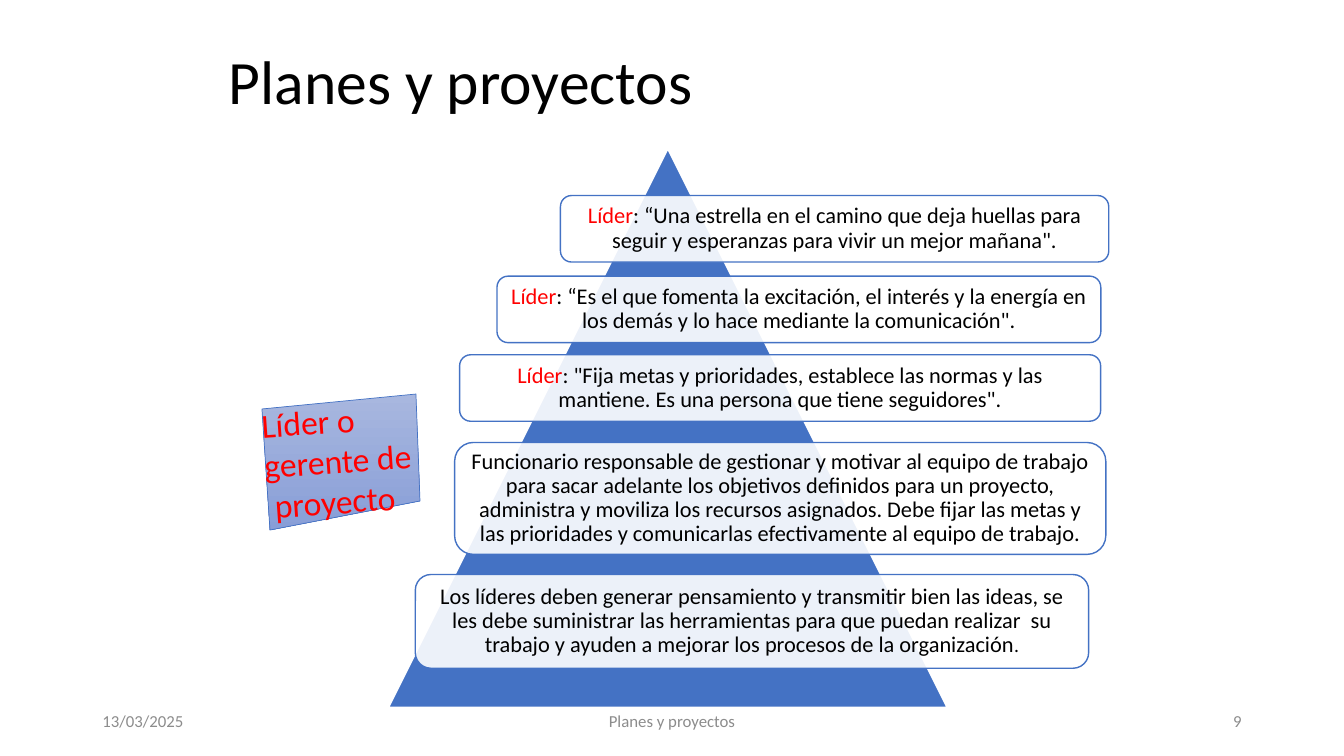
from lxml.etree import SubElement
from pptx import Presentation
from pptx.dml.color import RGBColor
from pptx.enum.shapes import MSO_SHAPE as Shape
from pptx.enum.text import MSO_ANCHOR as Anchor, MSO_AUTO_SIZE as AutoSize, PP_ALIGN as Align
from pptx.oxml.ns import qn
from pptx.util import Inches, Pt

W, H = Inches(13.333), Inches(7.5)
FONT = "Calibri"
COLORS = {
    "black": "000000", "white": "FFFFFF", "red": "FF0000", "grey": "8C8C8C",
    "blue": "4472C4", "label_top": "A8B7DF", "label_bottom": "889ED7",
}
LEADER = ("Líder", "red", 16)
QUOTES = [
    ((41.7, 25.87, 40.8, 8.8), [LEADER, (
        ": “Una estrella en el camino que deja huellas para seguir y "
        "esperanzas para vivir un mejor mañana\".", "black", 16)]),
    ((36.98, 36.53, 44.93, 8.8), [LEADER, (
        ": “Es el que fomenta la excitación, el interés y la energía en "
        "los demás y lo hace mediante la comunicación\".", "black", 16)]),
    ((34.2, 46.93, 47.7, 8.8), [LEADER, (
        ": \"Fija metas y prioridades, establece las normas y las "
        "mantiene. Es una persona que tiene seguidores\".", "black", 16)]),
    ((33.83, 58.53, 48.45, 14.8), [(
        "Funcionario responsable de gestionar y motivar al equipo de trabajo "
        "para sacar adelante los objetivos definidos para un proyecto, "
        "administra y moviliza los recursos asignados. Debe fijar las metas y "
        "las prioridades y comunicarlas efectivamente al equipo de trabajo.",
        "black", 16)]),
    ((30.9, 76, 50.1, 12.4), [(
        "Los líderes deben generar pensamiento y transmitir bien las ideas, se "
        "les debe suministrar las herramientas para que puedan realizar  su "
        "trabajo y ayuden a mejorar los procesos de la organización",
        "black", 16), (".", "black", 14)]),
]
FOOTERS = [
    (6.88, 22.5, "13/03/2025", Align.LEFT),
    (33.13, 33.75, "Planes y proyectos", Align.CENTER),
    (70.63, 22.5, "9", Align.RIGHT),
]
LABEL_CORNERS = [(19.49, 54.1), (30.95, 52.12), (31.25, 66.27), (20.09, 70.11)]


def rgb(name):
    """Return a named colour."""
    return RGBColor.from_string(COLORS[name])


def across(share):
    """Turn a percentage of the slide width into a length."""
    return round(W * share / 100)


def down(share):
    """Turn a percentage of the slide height into a length."""
    return round(H * share / 100)


def box(x, y, w, h):
    """Turn percentages of the slide into left, top, width and height."""
    return across(x), down(y), across(w), down(h)


def style(p, size, color, align=Align.LEFT, spacing=1.0):
    """Set the font, alignment and line spacing of a paragraph."""
    p.font.name, p.font.size, p.font.color.rgb = FONT, Pt(size), rgb(color)
    p.alignment, p.line_spacing = align, spacing


def prepare(tf, inset=None):
    """Wrap a text frame and centre it vertically."""
    tf.word_wrap, tf.auto_size = True, AutoSize.NONE
    tf.vertical_anchor = Anchor.MIDDLE
    if inset is not None:
        tf.margin_left = tf.margin_right = Inches(inset)
        tf.margin_top = tf.margin_bottom = Inches(inset)


def paint(sp, fill, line, width):
    """Give a shape a flat fill and an outline without shadow."""
    sp.shadow.inherit = False
    sp.fill.solid()
    sp.fill.fore_color.rgb = rgb(fill)
    sp.line.color.rgb, sp.line.width = rgb(line), Pt(width)


def add_title(s, text):
    """Fill and place the title placeholder."""
    sp = s.shapes.title
    sp.left, sp.top, sp.width, sp.height = box(16.28, 2.8, 67.5, 16.67)
    sp.text_frame.text = text
    prepare(sp.text_frame)
    style(sp.text_frame.paragraphs[0], 44, "black", spacing=0.9)


def add_text(s, area, lines, size, color, align=Align.LEFT, inset=None):
    """Add a text box with one paragraph per line."""
    sp = s.shapes.add_textbox(*area)
    tf = sp.text_frame
    prepare(tf, inset)
    tf.text = "\n".join(lines)
    for p in tf.paragraphs:
        style(p, size, color, align)
    return sp


def add_label(s):
    """Add the slanted gradient label with its tilted text."""
    points = [(across(x), down(y)) for x, y in LABEL_CORNERS]
    builder = s.shapes.build_freeform(*points[0])
    builder.add_line_segments(points[1:], close=True)
    sp = builder.convert_to_shape()
    paint(sp, "label_top", "blue", 0.5)
    sp.fill.gradient()
    sp.fill.gradient_angle = 270
    for stop, color, position in zip(
            sp.fill.gradient_stops, ("label_top", "label_bottom"), (0, 1)):
        stop.color.rgb, stop.position = rgb(color), position
    text = add_text(s, box(19.65, 52.7, 11.25, 16.27),
                    ["Líder o gerente de", " proyecto"], 24, "red", inset=0)
    text.rotation = -4


def add_quote(s, area, runs):
    """Add a translucent rounded box with coloured runs."""
    sp = s.shapes.add_shape(Shape.ROUNDED_RECTANGLE, *area)
    paint(sp, "white", "blue", 1)
    clr = sp.fill._xPr.find(qn("a:solidFill")).find(qn("a:srgbClr"))
    SubElement(clr, qn("a:alpha"), val="90000")
    prepare(sp.text_frame, 0.07)
    p = sp.text_frame.paragraphs[0]
    p.alignment, p.line_spacing, p.font.name = Align.CENTER, 0.9, FONT
    for text, color, size in runs:
        r = p.add_run()
        r.text = text
        r.font.size, r.font.color.rgb = Pt(size), rgb(color)


def main():
    """Build the slide and save it."""
    prs = Presentation()
    prs.slide_width, prs.slide_height = W, H
    s = prs.slides.add_slide(prs.slide_layouts[5])
    add_title(s, "Planes y proyectos")
    for x, w, text, align in FOOTERS:
        add_text(s, box(x, 92.67, w, 5.33), [text], 12, "grey", align)
    add_label(s)
    pyramid = s.shapes.add_shape(Shape.ISOSCELES_TRIANGLE, *box(28.88, 19.6, 41.63, 74))
    paint(pyramid, "blue", "white", 1.5)
    for area, runs in QUOTES:
        add_quote(s, box(*area), runs)
    prs.save("out.pptx")


if __name__ == "__main__":
    main()
